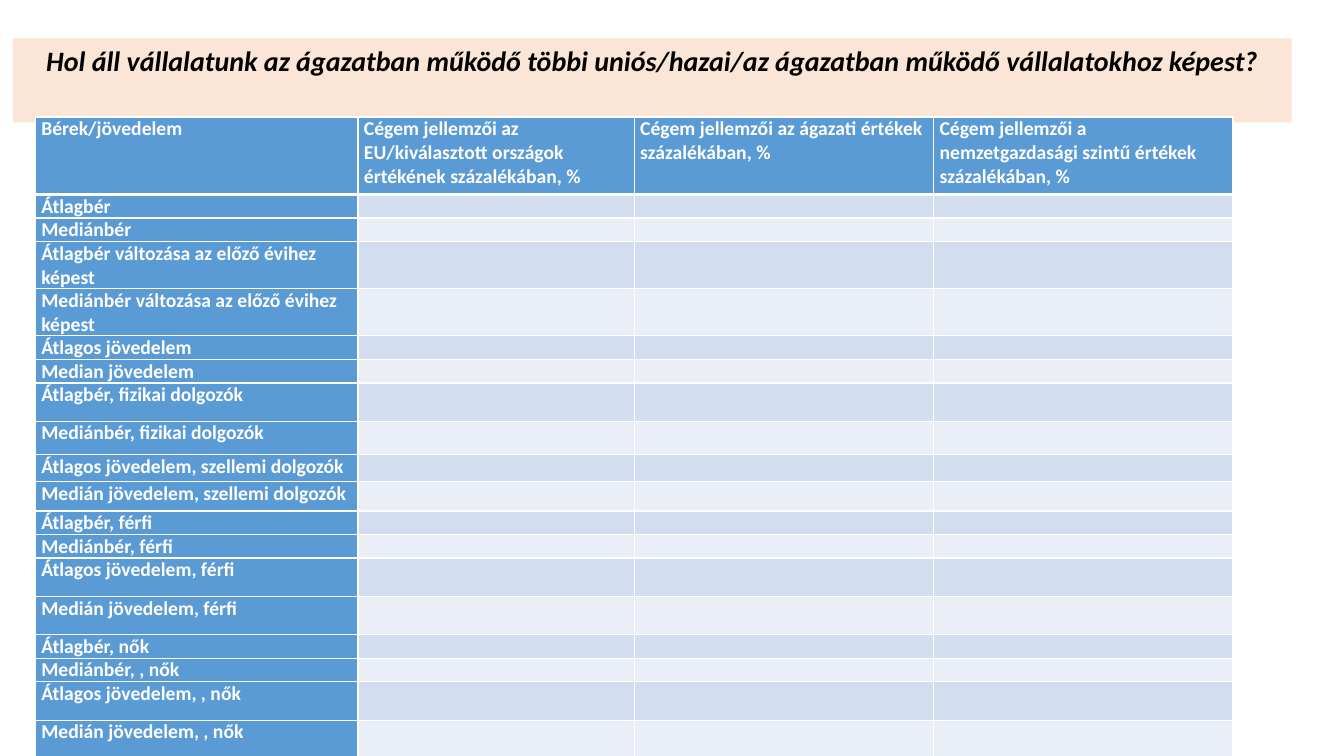
from lxml.etree import SubElement
from pptx import Presentation
from pptx.dml.color import RGBColor
from pptx.enum.text import MSO_ANCHOR, MSO_AUTO_SIZE, PP_ALIGN
from pptx.oxml.ns import qn
from pptx.util import Emu, Pt

PX = 9144
WHITE = RGBColor(0xFF, 0xFF, 0xFF)
BLACK = RGBColor(0x00, 0x00, 0x00)
PEACH = RGBColor(0xFB, 0xE5, 0xD6)
BLUE = RGBColor(0x5B, 0x9B, 0xD5)
DARK_BAND = RGBColor(0xD2, 0xDE, 0xEF)
LIGHT_BAND = RGBColor(0xEA, 0xEF, 0xF7)

TITLE_FONT = {"name": "Calibri", "size": Pt(20), "bold": True, "italic": True}
CELL_FONT = {"name": "Calibri", "size": Pt(14), "bold": True}
CELL_MARGINS = {
    "margin_left": Emu(6 * PX),
    "margin_right": Emu(6 * PX),
    "margin_top": 0,
    "margin_bottom": 0,
}

TITLE = (
    "Hol áll vállalatunk az ágazatban működő többi uniós/hazai/az ágazatban "
    "működő vállalatokhoz képest?"
)
HEADERS = [
    "Bérek/jövedelem",
    "Cégem jellemzői az EU/kiválasztott országok értékének százalékában, %",
    "Cégem jellemzői az ágazati értékek százalékában, %",
    "Cégem jellemzői a nemzetgazdasági szintű értékek százalékában, %",
]
COLUMN_WIDTHS = [320, 274, 297, 297]
HEADER_HEIGHT = 77
MEASURES = [
    ("Átlagbér", 21),
    ("Mediánbér", 21),
    ("Átlagbér változása az előző évihez képest", 32),
    ("Mediánbér változása az előző évihez képest", 29),
    ("Átlagos jövedelem", 21),
    ("Median jövedelem", 21),
    ("Átlagbér, fizikai dolgozók", 38),
    ("Mediánbér, fizikai dolgozók", 33),
    ("Átlagos jövedelem, szellemi dolgozók", 27),
    ("Medián jövedelem, szellemi dolgozók", 29),
    ("Átlagbér, férfi", 21),
    ("Mediánbér, férfi", 21),
    ("Átlagos jövedelem, férfi", 38),
    ("Medián jövedelem, férfi", 38),
    ("Átlagbér, nők", 21),
    ("Mediánbér, , nők", 21),
    ("Átlagos jövedelem, , nők", 38),
    ("Medián jövedelem, , nők", 38),
]


def set_attributes(target, values):
    for name, value in values.items():
        setattr(target, name, value)


def scale(box):
    return [Emu(length * PX) for length in box]


def write(para, text, font, color):
    span = para.add_run()
    span.text = text
    set_attributes(span.font, font)
    span.font.color.rgb = color


def add_title(page, box):
    title = page.shapes.title
    set_attributes(title, dict(zip(("left", "top", "width", "height"), scale(box))))
    title.fill.solid()
    title.fill.fore_color.rgb = PEACH
    frame = title.text_frame
    set_attributes(frame, {
        "word_wrap": True,
        "auto_size": MSO_AUTO_SIZE.SHAPE_TO_FIT_TEXT,
        "vertical_anchor": MSO_ANCHOR.TOP,
    })
    para = frame.paragraphs[0]
    para.alignment = PP_ALIGN.CENTER
    write(para, TITLE, TITLE_FONT, BLACK)


def add_borders(cell, row):
    widths = {"L": 1, "R": 1, "T": 3 if row == 1 else 1, "B": 3 if row == 0 else 1}
    properties = cell._tc.get_or_add_tcPr()
    for side, width in widths.items():
        line = SubElement(properties, qn(f"a:ln{side}"), w=str(Pt(width)))
        fill = SubElement(line, qn("a:solidFill"))
        SubElement(fill, qn("a:srgbClr"), val=str(WHITE))


def format_cell(cell, row, text, color):
    add_borders(cell, row)
    cell.fill.solid()
    cell.fill.fore_color.rgb = color
    set_attributes(cell, CELL_MARGINS)
    para = cell.text_frame.paragraphs[0]
    if text:
        write(para, text, CELL_FONT, WHITE)
    else:
        SubElement(para._p, qn("a:endParaRPr"), sz="1400")


def add_wage_table(page, left, top):
    heights = [HEADER_HEIGHT] + [height for _, height in MEASURES]
    box = scale((left, top, sum(COLUMN_WIDTHS), sum(heights)))
    table = page.shapes.add_table(len(heights), len(COLUMN_WIDTHS), *box).table
    for column, width in zip(table.columns, COLUMN_WIDTHS):
        column.width = Emu(width * PX)
    for row, height in zip(table.rows, heights):
        row.height = Emu(height * PX)
    for column, header in enumerate(HEADERS):
        format_cell(table.cell(0, column), 0, header, BLUE)
    for row, (measure, _) in enumerate(MEASURES, 1):
        format_cell(table.cell(row, 0), row, measure, BLUE)
        band = DARK_BAND if row % 2 else LIGHT_BAND
        for column in range(1, len(HEADERS)):
            format_cell(table.cell(row, column), row, "", band)


def main():
    deck = Presentation()
    deck.slide_width, deck.slide_height = scale((1333, 750))
    page = deck.slides.add_slide(deck.slide_layouts[5])
    add_title(page, (13, 38, 1268, 44))
    add_wage_table(page, 35, 116)
    deck.save("out.pptx")


if __name__ == "__main__":
    main()
